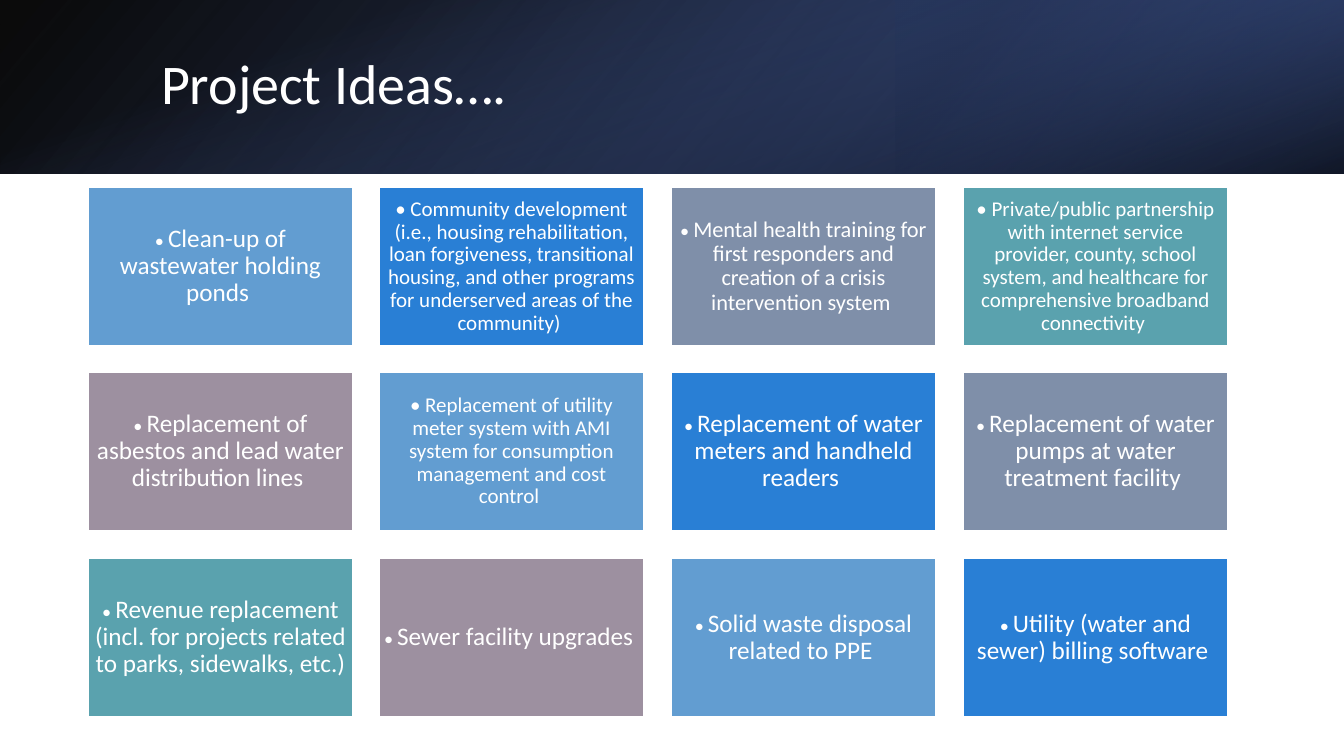
from pptx import Presentation
from pptx.dml.color import RGBColor
from pptx.enum.shapes import MSO_SHAPE as Shape
from pptx.enum.text import MSO_ANCHOR as Anchor, MSO_AUTO_SIZE as AutoSize, PP_ALIGN as Align
from pptx.oxml import parse_xml
from pptx.oxml.ns import nsdecls, qn
from pptx.util import Pt

EMU_PER_PX = 914400 / 100.8
PAGE_WIDTH, PAGE_HEIGHT = 1344, 756
BAND_HEIGHT = 174
TITLE_ONLY = 5

COLORS = {
    "white": "FFFFFF", "black": "000000", "navy": "384C81",
    "midnight": "253356", "indigo": "4A66AC",
    "sky": "629DD1", "blue": "297FD5", "slate": "7F8FA9",
    "teal": "5AA2AE", "mauve": "9D90A0",
}
TILE_COLORS = ["sky", "blue", "slate", "teal", "mauve"]

# Each idea with its text size in points
IDEAS = [
    ("Clean-up of wastewater holding ponds", 18),
    ("Community development (i.e., housing rehabilitation, loan forgiveness, "
     "transitional housing, and other programs for underserved areas of the community)", 15),
    ("Mental health training for first responders and creation of a crisis "
     "intervention system", 16),
    ("Private/public partnership with internet service provider, county, school "
     "system, and healthcare for comprehensive broadband connectivity", 15),
    ("Replacement of asbestos and lead water distribution lines", 18),
    ("Replacement of utility meter system with AMI system for consumption "
     "management and cost control", 15),
    ("Replacement of water meters and handheld readers", 18),
    ("Replacement of water pumps at water treatment facility", 18),
    ("Revenue replacement (incl. for projects related to parks, sidewalks, etc.)", 18),
    ("Sewer facility upgrades", 18),
    ("Solid waste disposal related to PPE", 18),
    ("Utility (water and sewer) billing software", 18),
]


def px(length):
    return round(length * EMU_PER_PX)


def rgb(name):
    return RGBColor.from_string(COLORS[name])


class SlideBuilder:
    font = "Calibri"
    line_spacing = 0.9

    def __init__(self, page):
        self.page = page

    def rect(self, left, top, width, height):
        box = self.page.shapes.add_shape(
            Shape.RECTANGLE, px(left), px(top), px(width), px(height))
        box.shadow.inherit = False
        return box

    def gradient_band(self, frame, stops, angle, rotation=0, flip=False):
        """Stops are (position %, colour name, opacity %)."""
        band = self.rect(*frame)
        band.rotation = rotation
        band.line.fill.background()
        band.fill.background()
        properties = band.element.spPr
        if flip:
            properties.find(qn("a:xfrm")).set("flipH", "1")
        stop_xml = "".join(
            f'<a:gs pos="{position * 1000}"><a:srgbClr val="{COLORS[color]}">'
            f'<a:alpha val="{opacity * 1000}"/></a:srgbClr></a:gs>'
            for position, color, opacity in stops)
        gradient = parse_xml(
            f'<a:gradFill rotWithShape="1" {nsdecls("a")}><a:gsLst>{stop_xml}</a:gsLst>'
            f'<a:lin ang="{angle * 60000}" scaled="0"/></a:gradFill>')
        properties.replace(properties.find(qn("a:noFill")), gradient)

    def paragraph(self, frame, runs, align):
        frame.word_wrap = True
        frame.auto_size = AutoSize.NONE
        frame.vertical_anchor = Anchor.MIDDLE
        para = frame.paragraphs[0]
        para.alignment = align
        para.line_spacing = self.line_spacing
        for text, size in runs:
            span = para.add_run()
            span.text = text
            span.font.name = self.font
            span.font.size = Pt(size)
            span.font.color.rgb = rgb("white")

    def title(self, text, left, top, width, height):
        title = self.page.shapes.title
        title.left, title.top = px(left), px(top)
        title.width, title.height = px(width), px(height)
        self.paragraph(title.text_frame, [(text, 40)], Align.LEFT)
        self.page.shapes.element.append(title.element)  # in front of the bands

    def tile(self, left, top, width, height, color, idea, size):
        box = self.rect(left, top, width, height)
        box.fill.solid()
        box.fill.fore_color.rgb = rgb(color)
        box.line.color.rgb = rgb("white")
        box.line.width = Pt(1)
        frame = box.text_frame
        inset = px(6 if size == 15 else 5)
        frame.margin_left = frame.margin_right = inset
        frame.margin_top = frame.margin_bottom = inset
        bullet_size = 15 if size == 15 else 13
        self.paragraph(frame, [("• ", bullet_size), (f"{idea} ", size)], Align.CENTER)


def main():
    deck = Presentation()
    deck.slide_width, deck.slide_height = px(PAGE_WIDTH), px(PAGE_HEIGHT)
    page = deck.slides.add_slide(deck.slide_layouts[TITLE_ONLY])
    builder = SlideBuilder(page)

    # Header: three layered gradients
    builder.gradient_band((0, 0, PAGE_WIDTH, BAND_HEIGHT),
                          [(0, "black", 96), (100, "navy", 100)], 140, flip=True)
    builder.gradient_band((896, 0, 448, BAND_HEIGHT),
                          [(19, "midnight", 68), (100, "indigo", 79)], 320, 180, flip=True)
    offset = (PAGE_WIDTH - BAND_HEIGHT) // 2  # centres the upright band before its turn
    builder.gradient_band((offset, -offset, BAND_HEIGHT, PAGE_WIDTH),
                          [(23, "indigo", 0), (99, "black", 74)], 340, 90)
    builder.title("Project Ideas….", 151, 38, 1107, 97)

    # Grid of ideas: four columns, colours in rotation
    for index, (idea, size) in enumerate(IDEAS):
        row, column = divmod(index, 4)
        left = 88 + column * 875 // 3
        top = 187 + row * 371 // 2
        color = TILE_COLORS[index % len(TILE_COLORS)]
        builder.tile(left, top, 265, 159, color, idea, size)

    deck.save("out.pptx")


if __name__ == "__main__":
    main()
